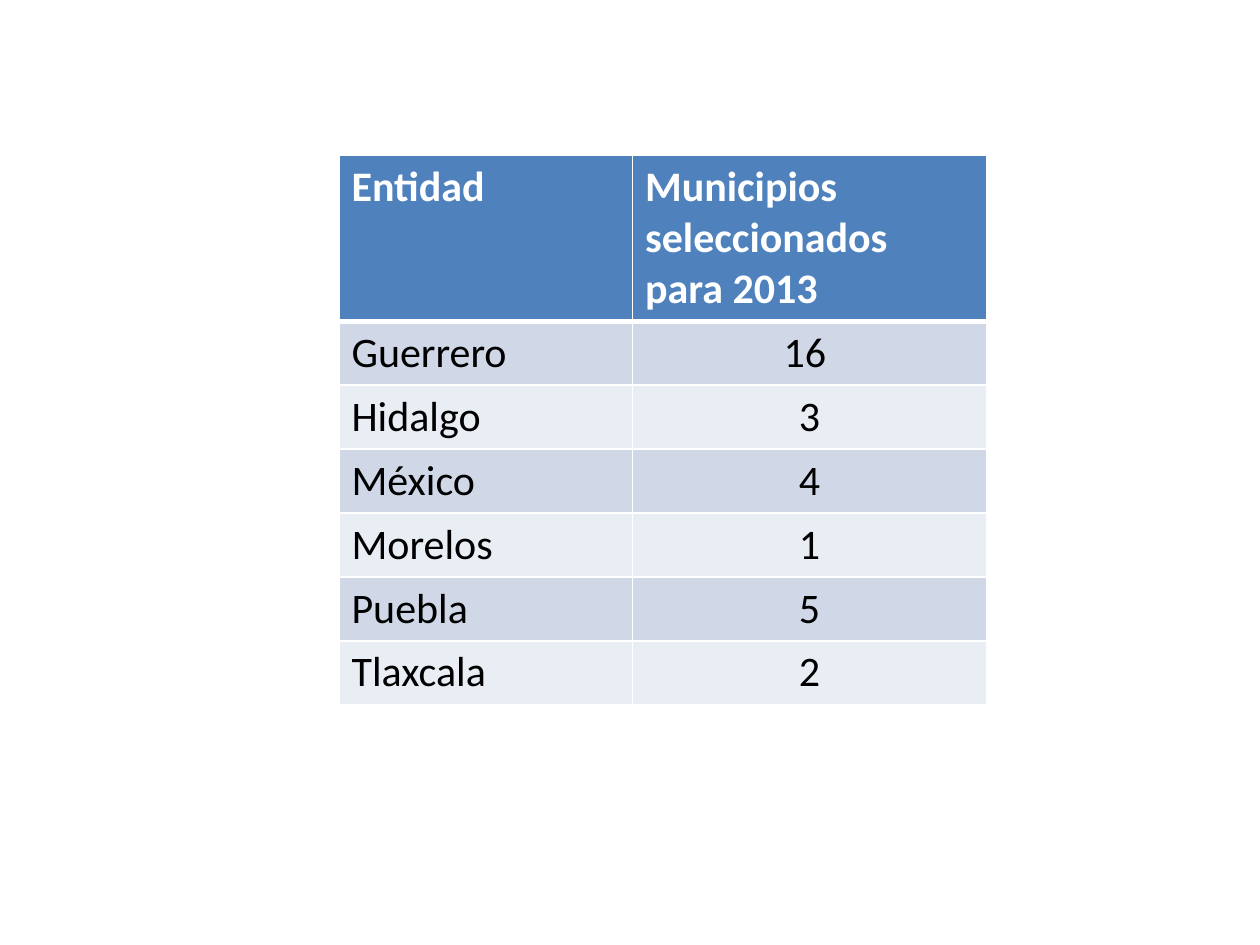
from dataclasses import dataclass

from lxml import etree
from pptx import Presentation
from pptx.dml.color import RGBColor
from pptx.enum import text
from pptx.oxml import ns
from pptx.util import Inches, Pt


@dataclass(frozen=True)
class Theme:
    font: str = "Calibri"
    size: int = 24
    header_fill: str = "4F81BD"
    header_ink: str = "FFFFFF"
    bands: tuple = ("D0D8E8", "E9EDF4")
    ink: str = "000000"
    rule: str = "FFFFFF"
    thin: int = 1
    thick: int = 3


THEME = Theme()
HEADINGS = ("Entidad", "Municipios seleccionados para 2013")
MUNICIPALITIES = (
    ("Guerrero", "16 "),
    ("Hidalgo", "3"),
    ("México", "4"),
    ("Morelos", "1"),
    ("Puebla", "5"),
    ("Tlaxcala", "2"),
)


def draw_borders(cell, widths):
    properties = cell._tc.get_or_add_tcPr()
    for side, width in widths.items():
        line = etree.SubElement(properties, ns.qn(f"a:ln{side}"), w=str(Pt(width)))
        fill = etree.SubElement(line, ns.qn("a:solidFill"))
        etree.SubElement(fill, ns.qn("a:srgbClr"), val=THEME.rule)


def format_cell(cell, wording, row, column):
    is_header = row == 0
    draw_borders(cell, {
        "L": THEME.thin,
        "R": THEME.thin,
        "T": THEME.thick if row == 1 else THEME.thin,
        "B": THEME.thick if is_header else THEME.thin,
    })
    band = THEME.header_fill if is_header else THEME.bands[(row - 1) % 2]
    cell.fill.solid()
    cell.fill.fore_color.rgb = RGBColor.from_string(band)

    paragraph = cell.text_frame.paragraphs[0]
    if column and not is_header:
        paragraph.alignment = text.PP_ALIGN.CENTER
    run = paragraph.add_run()
    run.text = wording
    font_format = {"name": THEME.font, "size": Pt(THEME.size), "bold": is_header}
    for attribute, value in font_format.items():
        setattr(run.font, attribute, value)
    ink = THEME.header_ink if is_header else THEME.ink
    run.font.color.rgb = RGBColor.from_string(ink)


def add_municipality_table(slide, left, top, width, height):
    rows = (HEADINGS, *MUNICIPALITIES)
    table = slide.shapes.add_table(
        len(rows), len(HEADINGS), left, top, width, height
    ).table
    entity_width = Inches(2.33)
    table.columns[0].width = entity_width
    table.columns[1].width = width - entity_width
    header_height = Inches(1.31)
    body_height = (height - header_height) // len(MUNICIPALITIES)
    for row, wordings in enumerate(rows):
        table.rows[row].height = body_height if row else header_height
        for column, wording in enumerate(wordings):
            format_cell(table.cell(row, column), wording, row, column)


def main():
    deck = Presentation()
    deck.slide_width, deck.slide_height = Inches(10), Inches(7.5)
    slide = deck.slides.add_slide(deck.slide_layouts[6])
    add_municipality_table(
        slide, Inches(2.69), Inches(1.23), Inches(5.14), Inches(4.35)
    )
    deck.save("out.pptx")


if __name__ == "__main__":
    main()
